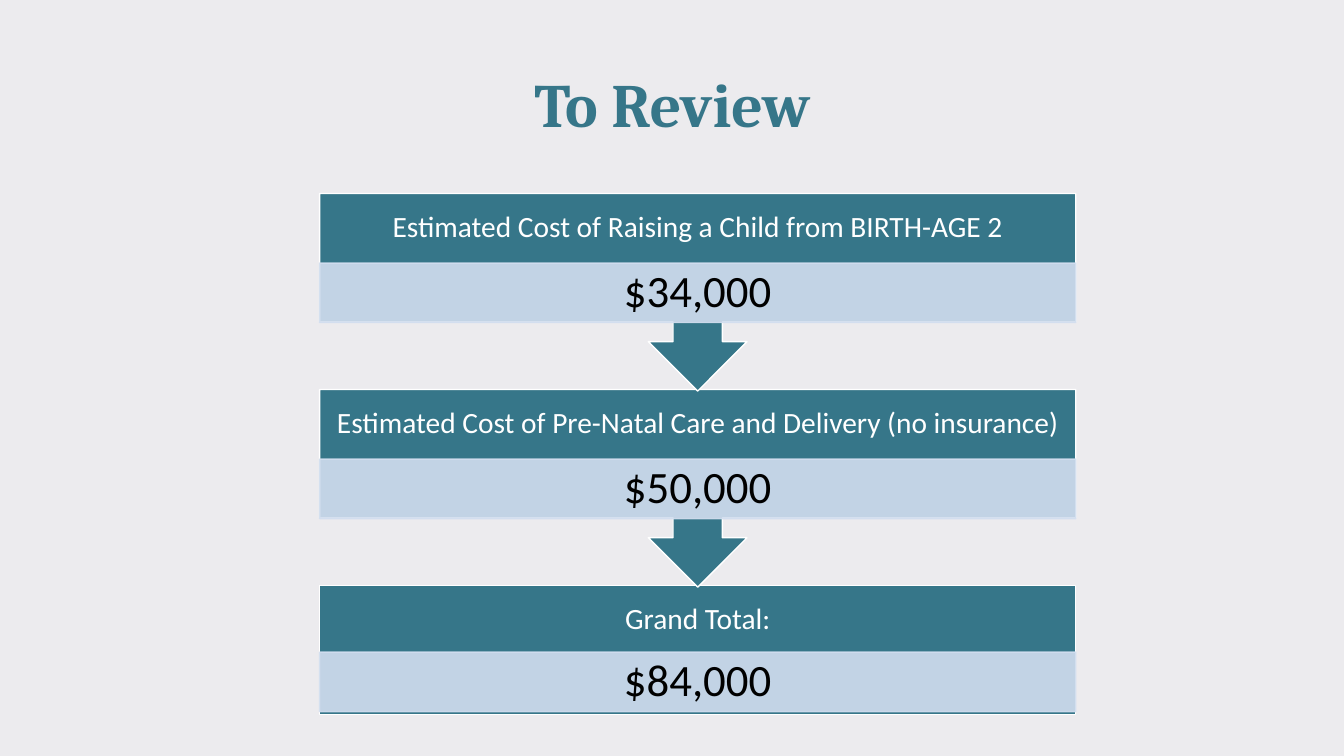
from dataclasses import dataclass

from lxml.etree import SubElement
from pptx import Presentation
from pptx.dml.color import RGBColor
from pptx.enum.shapes import MSO_SHAPE
from pptx.enum.text import MSO_ANCHOR, MSO_AUTO_SIZE, PP_ALIGN
from pptx.oxml.ns import qn
from pptx.util import Inches, Pt


@dataclass(frozen=True)
class Theme:
    background: str = "ECEBEE"
    teal: str = "367689"
    band: str = "D2DEEF"
    white: str = "FFFFFF"
    black: str = "000000"
    title_font: str = "Cambria"
    body_font: str = "Calibri"
    title_size: int = 44
    heading_size: int = 21
    amount_size: int = 32
    band_opacity: int = 90


THEME = Theme()

# Cost steps, from top to bottom
COSTS = [
    ("Estimated Cost of Raising a Child from BIRTH-AGE 2", "$34,000"),
    ("Estimated Cost of Pre-Natal Care and Delivery (no insurance)", "$50,000"),
    ("Grand Total:", "$84,000"),
]
LEFT, TOP, WIDTH = 3.17, 1.92, 7.5
STEP_PITCH = 1.945
CALLOUT_HEIGHT, TOTAL_HEIGHT = 1.96, 1.28
HEADING_HEIGHT, BAND_HEIGHT = 0.69, 0.59
BAND_OFFSET, TOTAL_BAND_OFFSET = 0.69, 0.66


def write_text(shape, text, *, size, color, font=THEME.body_font, bold=False,
               inset_x=0.1, inset_y=0.05):
    frame = shape.text_frame
    frame.word_wrap = True
    frame.auto_size = MSO_AUTO_SIZE.NONE
    frame.vertical_anchor = MSO_ANCHOR.MIDDLE
    frame.margin_left = frame.margin_right = Inches(inset_x)
    frame.margin_top = frame.margin_bottom = Inches(inset_y)
    paragraph = frame.paragraphs[0]
    paragraph.alignment = PP_ALIGN.CENTER
    paragraph.line_spacing = 0.9
    paragraph.space_before = Pt(0)
    run = paragraph.add_run()
    run.text = text
    run.font.name = font
    run.font.size = Pt(size)
    run.font.bold = bold
    run.font.color.rgb = RGBColor.from_string(color)


def add_panel(shapes, kind, top, height, fill, line, opacity=100):
    panel = shapes.add_shape(kind, Inches(LEFT), Inches(top),
                             Inches(WIDTH), Inches(height))
    panel.shadow.inherit = False
    panel.fill.solid()
    panel.fill.fore_color.rgb = RGBColor.from_string(fill)
    panel.line.color.rgb = RGBColor.from_string(line)
    panel.line.width = Pt(1)
    if opacity < 100:
        properties = panel.fill._xPr
        for color in properties.iter(qn("a:srgbClr")):
            SubElement(color, qn("a:alpha")).set("val", str(opacity * 1000))
    return panel


def add_cost_step(shapes, index, heading, amount):
    top = TOP + index * STEP_PITCH
    is_total = index == len(COSTS) - 1

    # Teal block, with an arrow to the next step
    add_panel(shapes,
              MSO_SHAPE.RECTANGLE if is_total else MSO_SHAPE.DOWN_ARROW_CALLOUT,
              top, TOTAL_HEIGHT if is_total else CALLOUT_HEIGHT,
              THEME.teal, THEME.white)
    heading_box = shapes.add_textbox(Inches(LEFT), Inches(top),
                                     Inches(WIDTH), Inches(HEADING_HEIGHT))
    write_text(heading_box, heading, size=THEME.heading_size,
               color=THEME.white, inset_x=0.16, inset_y=0.16)

    # Pale band with the amount
    band_top = top + (TOTAL_BAND_OFFSET if is_total else BAND_OFFSET)
    band = add_panel(shapes, MSO_SHAPE.RECTANGLE, band_top, BAND_HEIGHT,
                     THEME.band, THEME.band, THEME.band_opacity)
    write_text(band, amount, size=THEME.amount_size, color=THEME.black,
               inset_x=0.25, inset_y=0.04)


def add_title(slide, text):
    title = slide.shapes.title
    title.left, title.top = Inches(0.92), Inches(0.34)
    title.width, title.height = Inches(11.5), Inches(1.45)
    write_text(title, text, size=THEME.title_size, color=THEME.teal,
               font=THEME.title_font, bold=True)


def main():
    deck = Presentation()
    deck.slide_width, deck.slide_height = Inches(13.33), Inches(7.5)
    slide = deck.slides.add_slide(deck.slide_layouts[5])
    slide.background.fill.solid()
    slide.background.fill.fore_color.rgb = RGBColor.from_string(THEME.background)

    add_title(slide, "To Review")

    # Last step first, so each arrow tip lies over the step below
    diagram = slide.shapes.add_group_shape()
    for index, (heading, amount) in reversed(list(enumerate(COSTS))):
        add_cost_step(diagram.shapes, index, heading, amount)

    deck.save("out.pptx")


if __name__ == "__main__":
    main()
